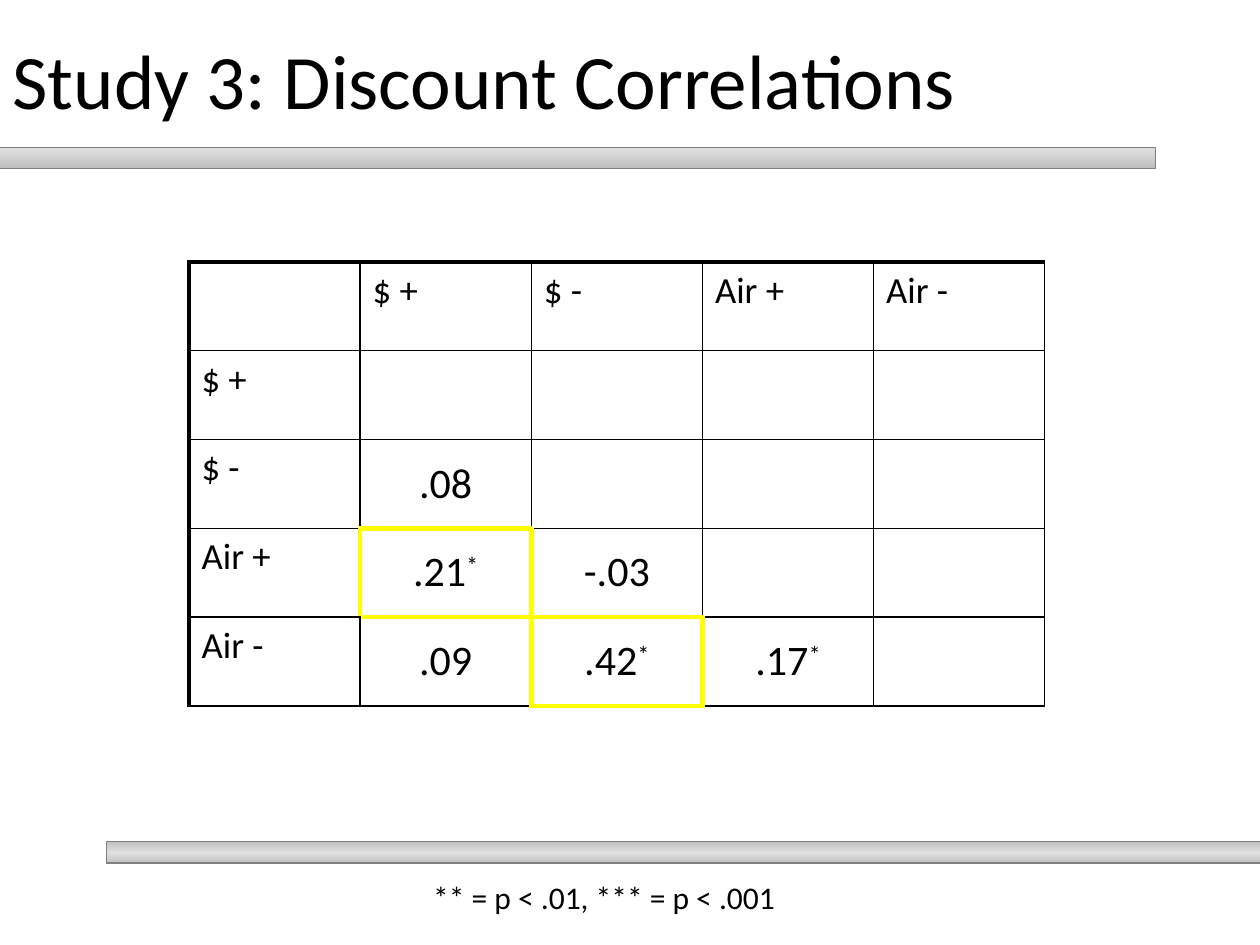
from lxml import etree
from pptx import Presentation
from pptx.dml.color import RGBColor
from pptx.enum.shapes import MSO_SHAPE as SHAPE
from pptx.enum.text import MSO_ANCHOR as ANCHOR, MSO_AUTO_SIZE as AUTO_SIZE, PP_ALIGN as ALIGN
from pptx.oxml import parse_xml
from pptx.oxml.ns import nsdecls, qn
from pptx.util import Cm, Pt

BLACK = RGBColor(0x00, 0x00, 0x00)
GRAY = RGBColor(0x80, 0x80, 0x80)
YELLOW = RGBColor(0xFF, 0xFF, 0x00)
SILVER = RGBColor(0xBD, 0xBD, 0xBD)
PALE = RGBColor(0xDD, 0xDD, 0xDD)
FONT = "Calibri"


def style_runs(p, size, align=ALIGN.LEFT):
    p.alignment = align
    for r in p.runs:
        r.font.name = FONT
        r.font.size = Pt(size)
        r.font.color.rgb = BLACK


def set_border(cell, side, color, width):
    ln = etree.SubElement(cell._tc.get_or_add_tcPr(), qn(f"a:ln{side}"), w=str(Pt(width)))
    fill = etree.SubElement(ln, qn("a:solidFill"))
    etree.SubElement(fill, qn("a:srgbClr"), val=str(color))


prs = Presentation()
prs.slide_width, prs.slide_height = Cm(25.4), Cm(19.05)
s = prs.slides.add_slide(prs.slide_layouts[5])

# Title
title = s.shapes.title
title.left, title.top, title.width, title.height = Cm(0), Cm(0), Cm(23.29), Cm(3.18)
title.text_frame.text = "Study 3: Discount Correlations"
title.text_frame.vertical_anchor = ANCHOR.MIDDLE
style_runs(title.text_frame.paragraphs[0], 44)

# Gradient bars, the pale stops slightly transparent
bars = [
    (-1.9, 2.97, [(0, PALE), (100, SILVER)]),
    (2.15, 16.97, [(0, SILVER), (50, PALE), (100, SILVER)]),
]
for left, top, stops in bars:
    bar = s.shapes.add_shape(SHAPE.RECTANGLE, Cm(left), Cm(top), Cm(25.2), Cm(0.43))
    bar.shadow.inherit = False
    bar.line.color.rgb = GRAY
    bar.line.width = Pt(0.75)
    bar.fill.gradient()
    bar.fill.gradient_angle = 270
    gs_list = bar._element.spPr.find(qn("a:gradFill")).find(qn("a:gsLst"))
    for gs in list(gs_list):
        gs_list.remove(gs)
    for pos, color in stops:
        alpha = '<a:alpha val="85000"/>' if color == PALE else ""
        gs_list.append(parse_xml(
            f'<a:gs {nsdecls("a")} pos="{pos * 1000}">'
            f'<a:srgbClr val="{color}">{alpha}</a:srgbClr></a:gs>'))

# Correlation table
labels = ["$ +", "$ -", "Air +", "Air -"]
values = {(2, 1): ".08", (3, 1): ".21*", (3, 2): "-.03",
          (4, 1): ".09", (4, 2): ".42*", (4, 3): ".17*"}
highlighted = {(3, 1), (4, 2)}
sides = {"L": (0, -1), "R": (0, 1), "T": (-1, 0), "B": (1, 0)}
n = len(labels) + 1

table = s.shapes.add_table(n, n, Cm(3.81), Cm(5.28), Cm(17.25), Cm(8.95)).table
table.first_row = table.horz_banding = False
for col in table.columns:
    col.width = Cm(3.45)
for row in table.rows:
    row.height = Cm(1.79)

for i in range(n):
    for j in range(n):
        cell = table.cell(i, j)
        # A shared edge is yellow when either neighbour is highlighted
        for side, (di, dj) in sides.items():
            if highlighted & {(i, j), (i + di, j + dj)}:
                set_border(cell, side, YELLOW, 3)
            else:
                outer = i + di < 0 or j + dj < 0
                set_border(cell, side, BLACK, 2.25 if outer else 1)
        cell.fill.background()

        p = cell.text_frame.paragraphs[0]
        if (i, j) in values:
            value = values[i, j]
            p.text = value.rstrip("*")
            if value.endswith("*"):
                r = p.add_run()
                r.text = "*"
                r.font._element.set("baseline", "30000")
            cell.vertical_anchor = ANCHOR.MIDDLE
            style_runs(p, 24, ALIGN.CENTER)
        elif (i == 0) != (j == 0):
            p.text = labels[i + j - 1]
            style_runs(p, 21)

# Significance note
note = s.shapes.add_textbox(Cm(8.05), Cm(17.58), Cm(8.26), Cm(1.02))
tf = note.text_frame
tf.word_wrap = True
tf.auto_size = AUTO_SIZE.SHAPE_TO_FIT_TEXT
tf.text = "** = p < .01, *** = p < .001"
style_runs(tf.paragraphs[0], 18, ALIGN.CENTER)

prs.save("out.pptx")
